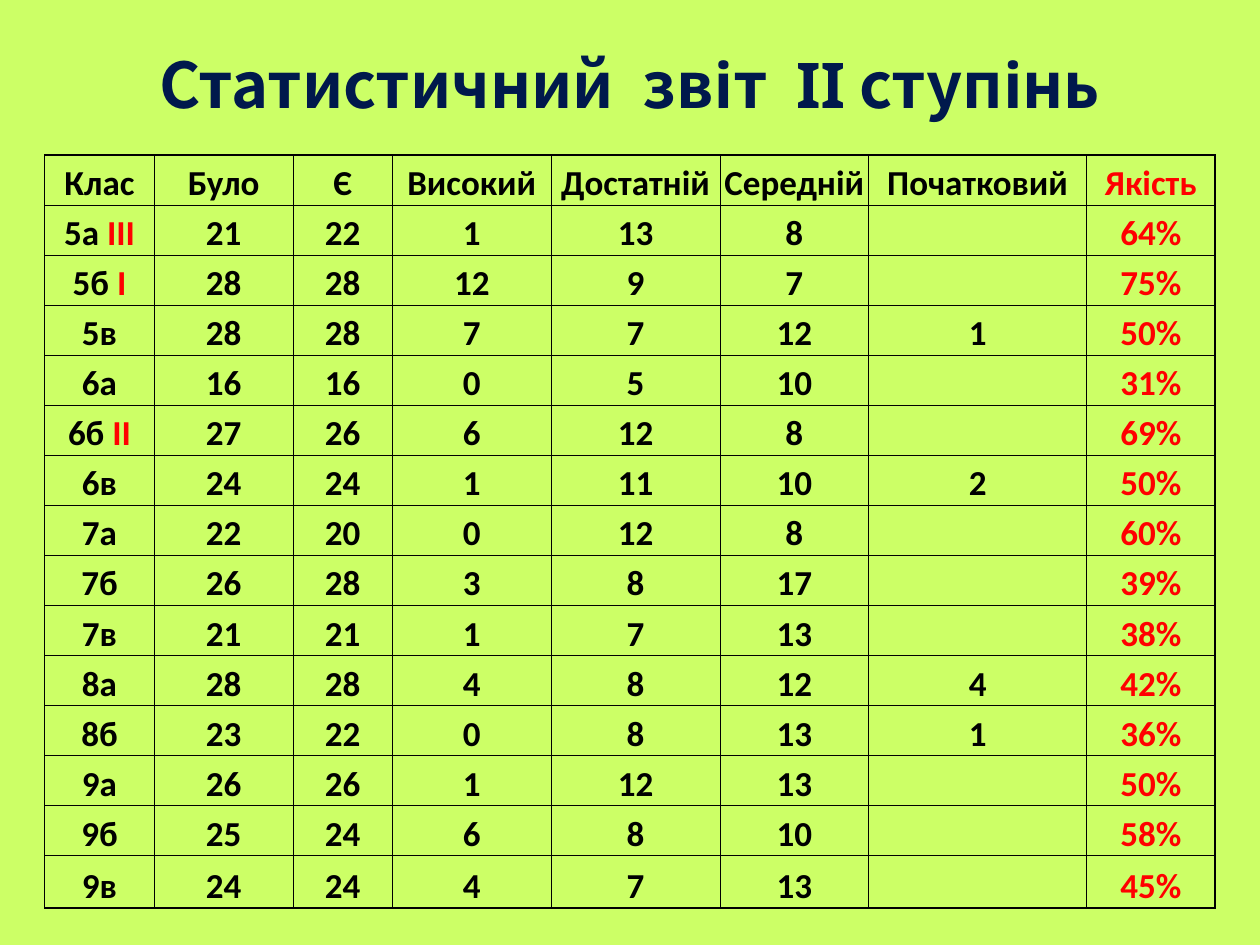
from lxml.etree import SubElement as Sub
from pptx import Presentation
from pptx.dml.color import RGBColor as Rgb
from pptx.enum.text import MSO_ANCHOR as Anchor, PP_ALIGN as Align
from pptx.oxml.ns import qn
from pptx.util import Inches, Pt

COLORS = {"back": "CCFF66", "title": "00194C", "text": "000000",
          "mark": "FF0000", "line": "000000"}
WIDE, HIGH = 10, 7.5
COLS = [0.87, 1.1, 0.79, 1.26, 1.34, 1.18, 1.73, 1.02]
ROWS = [0.4] * 14 + [0.42]
HEAD = ["Клас", "Було", "Є", "Високий", "Достатній", "Середній",
        "Початковий", "Якість"]
DATA = [
    ["5а", 21, 22, 1, 13, 8, "", "64%"],
    ["5б", 28, 28, 12, 9, 7, "", "75%"],
    ["5в", 28, 28, 7, 7, 12, 1, "50%"],
    ["6а", 16, 16, 0, 5, 10, "", "31%"],
    ["6б", 27, 26, 6, 12, 8, "", "69%"],
    ["6в", 24, 24, 1, 11, 10, 2, "50%"],
    ["7а", 22, 20, 0, 12, 8, "", "60%"],
    ["7б", 26, 28, 3, 8, 17, "", "39%"],
    ["7в", 21, 21, 1, 7, 13, "", "38%"],
    ["8а", 28, 28, 4, 8, 12, 4, "42%"],
    ["8б", 23, 22, 0, 8, 13, 1, "36%"],
    ["9а", 26, 26, 1, 12, 13, "", "50%"],
    ["9б", 25, 24, 6, 8, 10, "", "58%"],
    ["9в", 24, 24, 4, 7, 13, "", "45%"],
]
PLACES = {"5а": "ІІІ", "5б": "І", "6б": "ІІ"}


def add_run(para, text, size, font, color):
    run = para.add_run()
    run.text = text
    run.font.size = Pt(size)
    run.font.name = font
    run.font.bold = True
    run.font.color.rgb = Rgb.from_string(COLORS[color])


def add_title(slide, box):
    frame = slide.shapes.add_textbox(*map(Inches, box)).text_frame
    frame.word_wrap = True
    frame.vertical_anchor = Anchor.MIDDLE
    para = frame.paragraphs[0]
    para.alignment = Align.CENTER
    add_run(para, "Статистичний  звіт  ІІ ступінь", 36,
            "Noto Sans CJK KR", "title")


def set_lines(cell, row, col):
    last = len(COLS) - 1
    bold = {"L": col in (0, last), "R": col >= last - 1,
            "T": row == 0, "B": row == len(ROWS) - 1}
    props = cell._tc.get_or_add_tcPr()
    for side, thick in bold.items():
        line = Sub(props, qn(f"a:ln{side}"), w=str(Pt(1 if thick else 0.5)))
        fill = Sub(line, qn("a:solidFill"))
        Sub(fill, qn("a:srgbClr"), val=COLORS["line"])


def fill_cell(cell, row, col, value):
    set_lines(cell, row, col)
    cell.fill.background()
    cell.vertical_anchor = Anchor.BOTTOM
    cell.margin_left = cell.margin_right = cell.margin_top = Inches(0.01)
    cell.margin_bottom = 0
    para = cell.text_frame.paragraphs[0]
    para.alignment = Align.CENTER
    if value == "":
        return
    color = "mark" if col == len(COLS) - 1 else "text"
    place = PLACES.get(value)
    add_run(para, f"{value} " if place else str(value), 20, "Calibri", color)
    if place:
        add_run(para, place, 20, "Calibri", "mark")


def add_grid(slide, box):
    table = slide.shapes.add_table(len(ROWS), len(COLS),
                                   *map(Inches, box)).table
    table.first_row = table.horz_banding = False
    # Column and row sizes fill the box in proportion
    for part, size in zip(table.columns, COLS):
        part.width = Inches(box[2] * size / sum(COLS))
    for part, size in zip(table.rows, ROWS):
        part.height = Inches(box[3] * size / sum(ROWS))
    for row, values in enumerate([HEAD] + DATA):
        for col, value in enumerate(values):
            fill_cell(table.cell(row, col), row, col, value)


def main():
    deck = Presentation()
    deck.slide_width, deck.slide_height = Inches(WIDE), Inches(HIGH)
    slide = deck.slides.add_slide(deck.slide_layouts[6])
    # Background
    back = slide.background.fill
    back.solid()
    back.fore_color.rgb = Rgb.from_string(COLORS["back"])
    # Title and class results
    add_title(slide, (0, HIGH / 30, WIDE, HIGH * 0.11))
    wide = sum(COLS)
    add_grid(slide, ((WIDE - wide) / 2, 1.23, wide, 5.98))
    deck.save("out.pptx")


if __name__ == "__main__":
    main()
